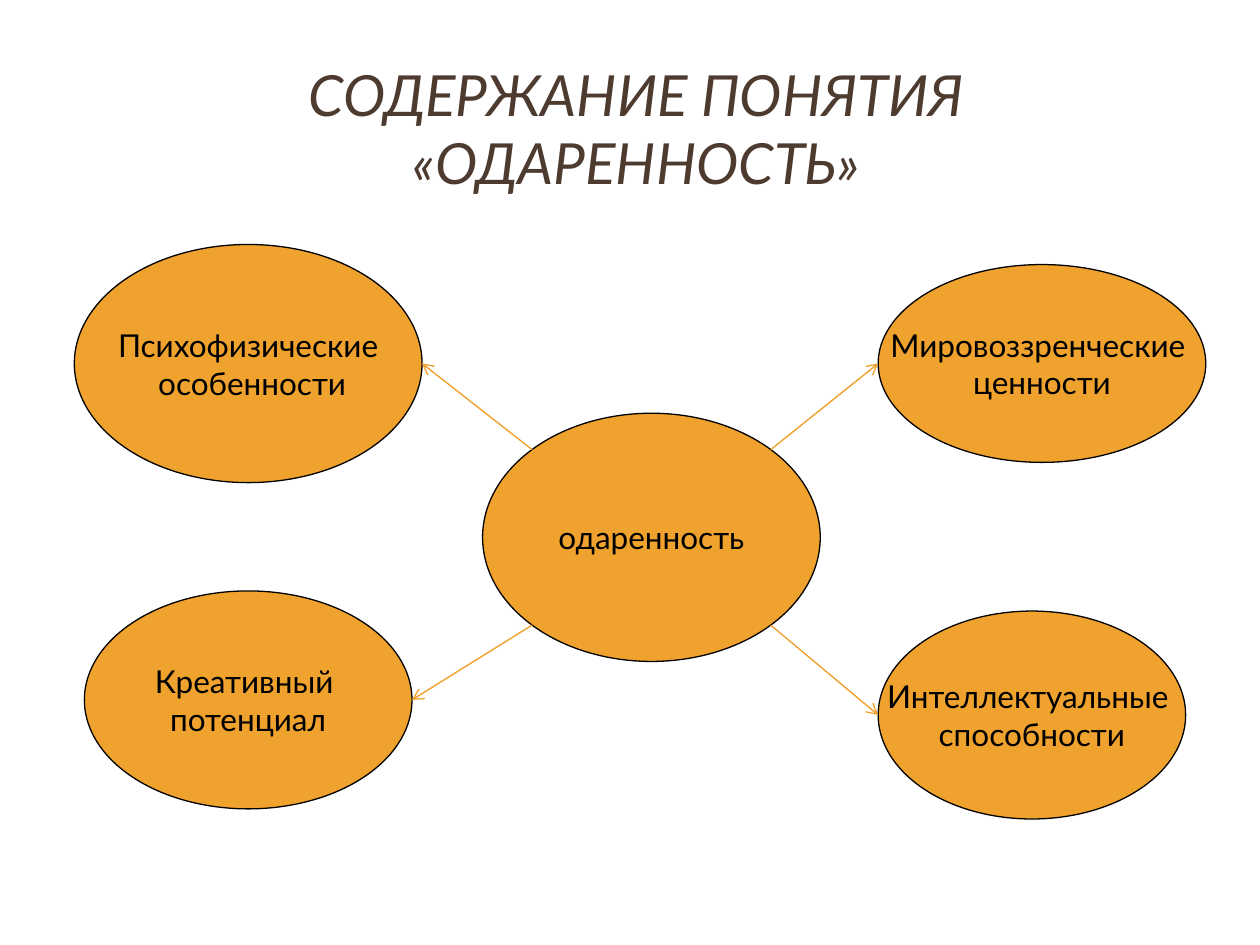
from math import sqrt

from lxml import etree
from pptx import Presentation
from pptx.dml.color import RGBColor
from pptx.enum import shapes, text
from pptx.oxml import ns
from pptx.util import Inches, Pt

COLORS = {"title": "4E3B30", "fill": "F0A22E", "outline": "000000", "text": "000000"}
FONT = "Lato"

# Ellipses: left, top, width, height in inches
CENTER = (3.83, 3.28, 2.68, 1.97)
# Each outer ellipse: lines, box, side of the centre (x, y)
BRANCHES = [
    (["Психофизические", " особенности"], (0.59, 1.94, 2.76, 1.89), (-1, -1)),
    (["Мировоззренческие ", "ценности"], (6.97, 2.1, 2.6, 1.57), (1, -1)),
    (["Креативный ", "потенциал"], (0.67, 4.69, 2.6, 1.73), (-1, 1)),
    (["Интеллектуальные ", "способности"], (6.97, 4.85, 2.44, 1.65), (1, 1)),
]


def rgb(name):
    return RGBColor.from_string(COLORS[name])


def write(tf, lines, size=18, color="text", italic=False, wrap=False):
    """Fill a text frame with centred paragraphs, one per line."""
    tf.word_wrap = wrap
    tf.auto_size = text.MSO_AUTO_SIZE.NONE
    tf.vertical_anchor = text.MSO_ANCHOR.MIDDLE
    for i, line in enumerate(lines):
        p = tf.add_paragraph() if i else tf.paragraphs[0]
        p.alignment = text.PP_ALIGN.CENTER
        r = p.add_run()
        r.text = line
        r.font.name = FONT
        r.font.size = Pt(size)
        r.font.italic = italic
        r.font.color.rgb = rgb(color)


def add_title(s, line):
    sp = s.shapes.title
    sp.left, sp.top, sp.width, sp.height = map(Inches, (0.55, 0.39, 9, 1.25))
    sp.text_frame.margin_left = sp.text_frame.margin_right = Inches(0.2)
    write(sp.text_frame, [line], size=32.4, color="title", italic=True, wrap=True)


def add_ellipse(s, lines, box):
    sp = s.shapes.add_shape(shapes.MSO_SHAPE.OVAL, *map(Inches, box))
    sp.shadow.inherit = False
    sp.fill.solid()
    sp.fill.fore_color.rgb = rgb("fill")
    sp.line.color.rgb = rgb("outline")
    sp.line.width = Pt(0.75)
    write(sp.text_frame, lines)


def rim_point(box, dx, dy):
    """Point on an ellipse's rim in the direction (dx, dy)."""
    left, top, width, height = box
    length = sqrt(dx * dx + dy * dy)
    return left + width / 2 * (1 + dx / length), top + height / 2 * (1 + dy / length)


def add_arrow(s, start, end):
    cx = s.shapes.add_connector(shapes.MSO_CONNECTOR.STRAIGHT, *map(Inches, start + end))
    cx.line.color.rgb = rgb("fill")
    cx.line.width = Pt(0.79)
    etree.SubElement(cx.line._get_or_add_ln(), ns.qn("a:tailEnd"), type="arrow")
    etree.SubElement(cx._element.spPr, ns.qn("a:effectLst"))


def main():
    prs = Presentation()
    prs.slide_width, prs.slide_height = Inches(10), Inches(7.5)
    s = prs.slides.add_slide(prs.slide_layouts[5])

    add_title(s, "СОДЕРЖАНИЕ ПОНЯТИЯ «ОДАРЕННОСТЬ»")

    # Central concept and its components
    add_ellipse(s, ["одаренность"], CENTER)
    for lines, box, _ in BRANCHES:
        add_ellipse(s, lines, box)

    # Arrows from the centre's diagonals to the facing side of each component
    for _, box, (dx, dy) in BRANCHES:
        add_arrow(s, rim_point(CENTER, dx, dy), rim_point(box, -dx, 0))

    prs.save("out.pptx")


if __name__ == "__main__":
    main()
